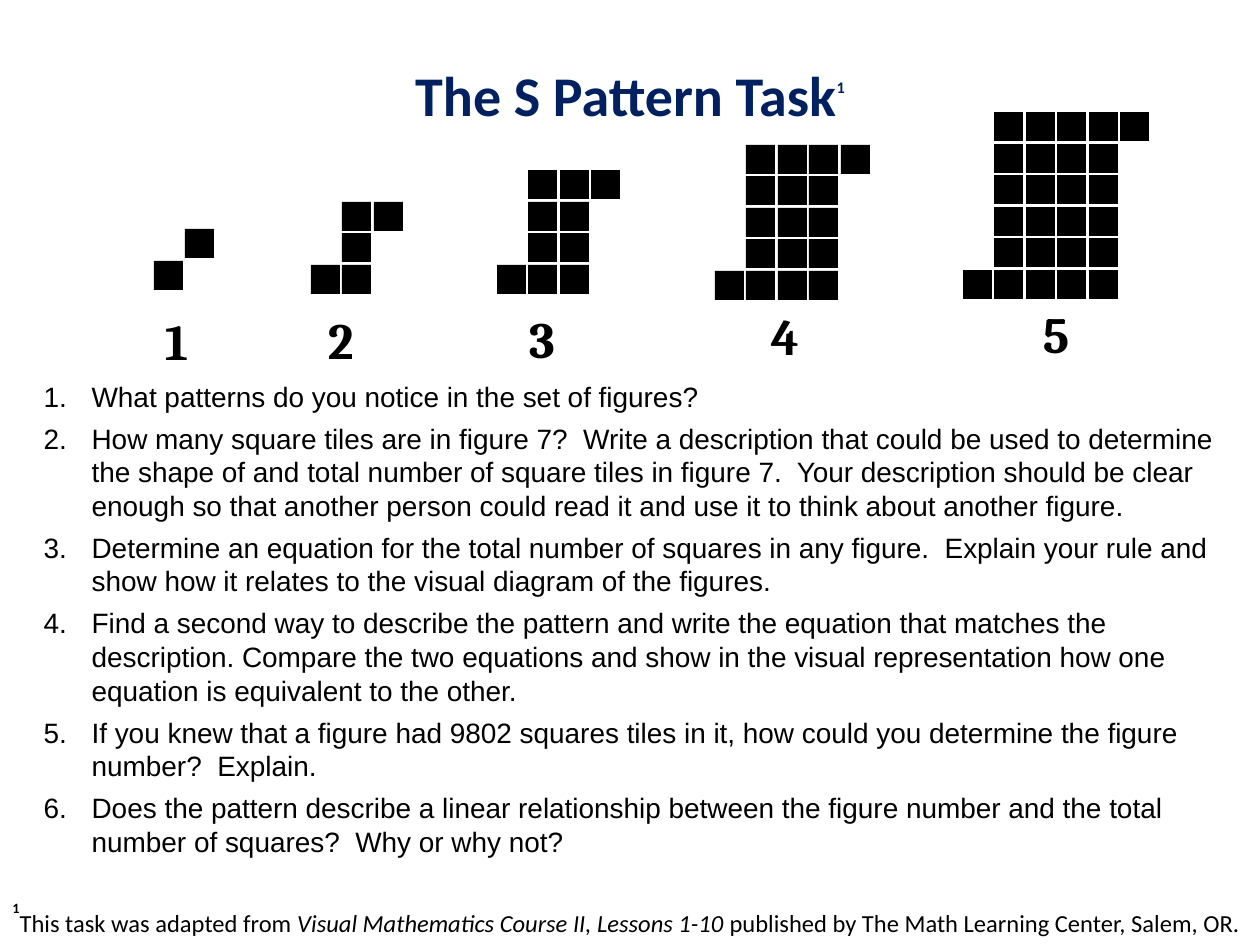
from dataclasses import dataclass

from lxml.etree import SubElement
from pptx import Presentation
from pptx.dml.color import RGBColor
from pptx.enum.shapes import MSO_SHAPE as Shape
from pptx.enum.text import MSO_ANCHOR as Anchor, MSO_AUTO_SIZE as AutoSize, PP_ALIGN as Align
from pptx.oxml.ns import qn
from pptx.util import Emu, Pt

EMU_PER_INCH = 914400
PX_PER_INCH = 126


@dataclass(frozen=True)
class Theme:
    navy: str = "002060"
    black: str = "000000"
    heading_font: str = "Calibri"
    body_font: str = "Arial"
    label_font: str = "Cambria"
    title_size: int = 32
    title_mark_size: int = 16
    label_size: int = 29
    body_size: int = 16
    note_size: int = 14
    paragraph_gap: float = 4.8
    line_spacing: float = 1.0


THEME = Theme()
TILE = 29
TWO_TILE_STEP = 63

FIGURES = [
    {"corner": (154, 261), "label": (165, 310, 48, 62)},
    {"corner": (311, 265), "label": (328, 309, 45, 62)},
    {"corner": (497, 265), "label": (529, 308, 92, 62)},
    {"corner": (715, 271), "label": (771, 305, 72, 62)},
    {"corner": (963, 270), "label": (1043, 303, 88, 62)},
]

QUESTIONS = [
    "What patterns do you notice in the set of figures?",
    "How many square tiles are in figure 7?  Write a description that could be used to determine "
    "the shape of and total number of square tiles in figure 7.  Your description should be clear "
    "enough so that another person could read it and use it to think about another figure.",
    "Determine an equation for the total number of squares in any figure.  Explain your rule and "
    "show how it relates to the visual diagram of the figures.",
    "Find a second way to describe the pattern and write the equation that matches the "
    "description. Compare the two equations and show in the visual representation how one "
    "equation is equivalent to the other.",
    "If you knew that a figure had 9802 squares tiles in it, how could you determine the figure "
    "number?  Explain.",
    "Does the pattern describe a linear relationship between the figure number and the total "
    "number of squares?  Why or why not?",
]


def px(length):
    return Emu(round(length * EMU_PER_INCH / PX_PER_INCH))


def place(shape, box):
    shape.left, shape.top, shape.width, shape.height = map(px, box)


def add_text(paragraph, text, *, size, font, color=THEME.black, bold=False, italic=False, raised=False):
    run = paragraph.add_run()
    run.text = text
    run.font.size = Pt(size)
    run.font.name = font
    run.font.bold = bold
    run.font.italic = italic
    run.font.color.rgb = RGBColor.from_string(color)
    if raised:
        run.font._element.set("baseline", "80000")


def add_text_box(slide, box, inset=True):
    shape = slide.shapes.add_textbox(*map(px, box))
    frame = shape.text_frame
    frame.word_wrap = True
    if not inset:
        frame.margin_left = frame.margin_right = frame.margin_top = frame.margin_bottom = 0
    return frame.paragraphs[0]


def fill_title(title):
    place(title, (63, 15, 1134, 158))
    title.text_frame.vertical_anchor = Anchor.MIDDLE
    paragraph = title.text_frame.paragraphs[0]
    paragraph.alignment = Align.CENTER
    style = {"font": THEME.heading_font, "color": THEME.navy, "bold": True}
    add_text(paragraph, "The S Pattern Task", size=THEME.title_size, **style)
    add_text(paragraph, "1", size=THEME.title_mark_size, raised=True, **style)


def number_paragraph(paragraph):
    properties = paragraph._p.get_or_add_pPr()
    properties.set("marL", str(px(79)))
    properties.set("indent", str(px(-48)))
    SubElement(properties, qn("a:buFont"), typeface=THEME.body_font)
    SubElement(properties, qn("a:buAutoNum"), type="arabicPeriod")


def fill_questions(body):
    place(body, (0, 373, 1260, 500))
    frame = body.text_frame
    frame.auto_size = AutoSize.NONE
    frame.vertical_anchor = Anchor.TOP
    for index, question in enumerate(QUESTIONS):
        paragraph = frame.add_paragraph() if index else frame.paragraphs[0]
        paragraph.alignment = Align.LEFT
        paragraph.line_spacing = THEME.line_spacing
        paragraph.space_before = Pt(THEME.paragraph_gap if index else 0)
        paragraph.space_after = Pt(0)
        number_paragraph(paragraph)
        add_text(paragraph, question, size=THEME.body_size, font=THEME.body_font)


def add_tile(group, left, top):
    tile = group.shapes.add_shape(Shape.RECTANGLE, px(left), px(top), px(TILE), px(TILE))
    tile.shadow.inherit = False
    tile.fill.solid()
    tile.fill.fore_color.rgb = RGBColor.from_string(THEME.black)
    tile.line.fill.background()


def s_pattern_cells(number):
    middle = [(column, row) for row in range(number + 1) for column in range(1, number)]
    return [(0, 0), *middle, (number, number)]


def add_figure(slide, number, corner, label):
    group = slide.shapes.add_group_shape()
    left, bottom_row = corner
    for column, row in s_pattern_cells(number):
        add_tile(group, left + column * TWO_TILE_STEP // 2, bottom_row + -row * TWO_TILE_STEP // 2)
    paragraph = add_text_box(slide, label, inset=False)
    add_text(paragraph, str(number), size=THEME.label_size, font=THEME.label_font, bold=True)


def add_footnote(slide):
    paragraph = add_text_box(slide, (0, 893, 1260, 48))
    style = {"size": THEME.note_size, "font": THEME.heading_font}
    add_text(paragraph, "1", bold=True, raised=True, **style)
    add_text(paragraph, "This task was adapted from ", **style)
    add_text(paragraph, "Visual Mathematics Course II, Lessons 1-10", italic=True, **style)
    add_text(paragraph, " published by The Math Learning Center, Salem, OR.", **style)


def main():
    presentation = Presentation()
    presentation.slide_width, presentation.slide_height = px(1260), px(945)
    slide = presentation.slides.add_slide(presentation.slide_layouts[1])
    fill_title(slide.shapes.title)
    fill_questions(slide.placeholders[1])
    for number, figure in enumerate(FIGURES, start=1):
        add_figure(slide, number, **figure)
    add_footnote(slide)
    presentation.save("out.pptx")


if __name__ == "__main__":
    main()
